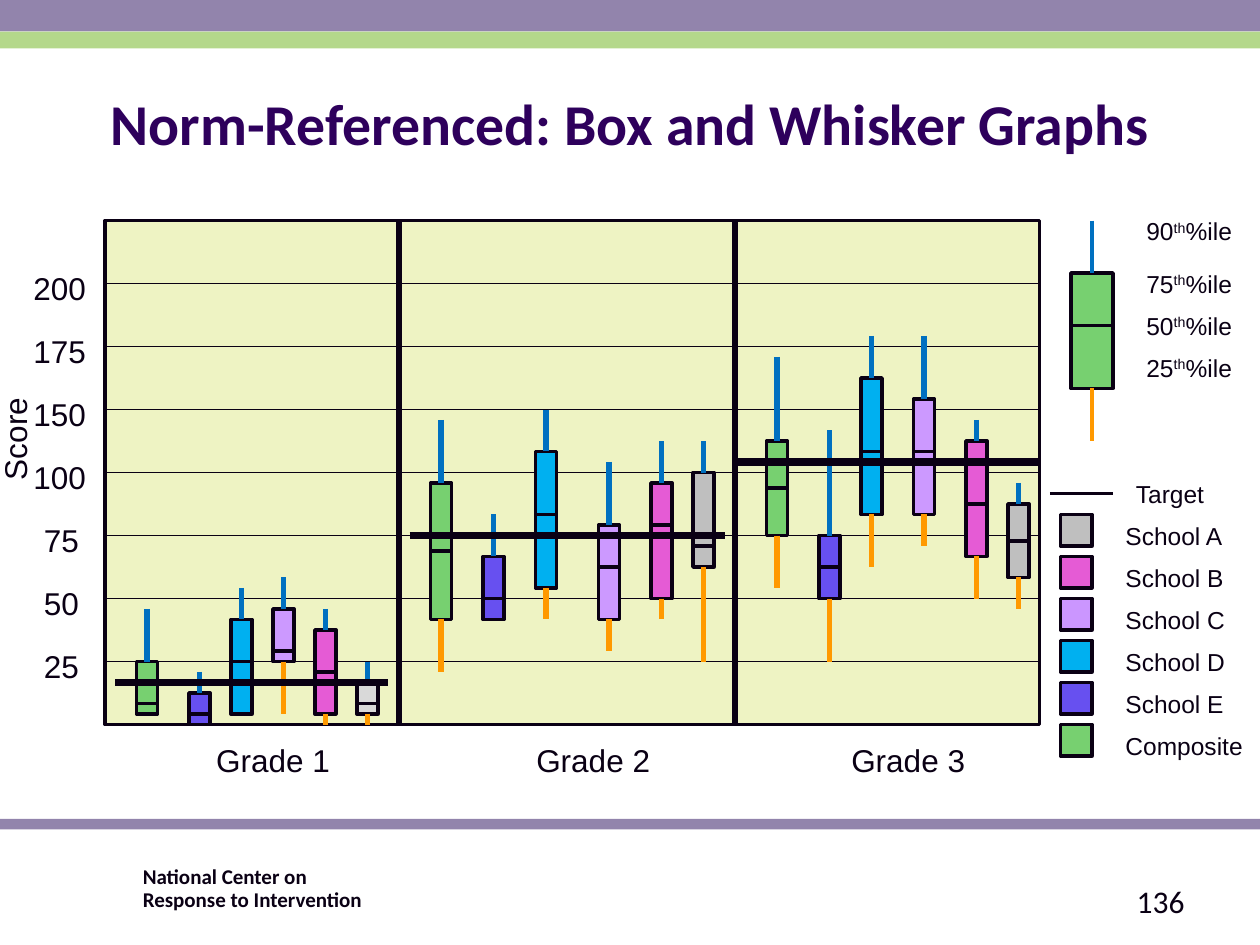
import pptx
import pptx.util
import pptx.dml.color
import pptx.enum.shapes
import pptx.enum.text
import pptx.oxml.ns
from lxml import etree

PX = pptx.util.Inches(1) // 120
ALIGN = pptx.enum.text.PP_ALIGN
ANCHOR = pptx.enum.text.MSO_ANCHOR
TOP, LEFT, BOTTOM, RIGHT = range(4)

INK, PURPLE, LIME = "0A0014", "9284AC", "B4D88B"
UPPER_WHISKER, LOWER_WHISKER = "0070C0", "FF9900"
GREEN, INDIGO, BLUE, LILAC, PINK, GRAY = (
    "77D070", "6750F0", "00B0F0", "CC99FF", "E55BD5", "BFBFBF")

BANDS = [(0, 0, 1200, 30, PURPLE), (0, 30, 1200, 16, LIME), (0, 780, 1200, 10, PURPLE)]
PLOT = (100, 210, 890, 480)
SCORES = ["200", "175", "150", "100", "75", "50", "25"]
GRID_TOP, GRID_STEP = 270, 60
DIVIDERS = [380, 700]
BOX_WIDTH = 20

# Boxes: fill, left, then heights on the slide of the 90th, 75th, 50th, 25th and 10th percentile
GRADES = [
    {"label": ("Grade 1", 180, 160), "target": (110, 370, 650), "boxes": [
        (GREEN, 130, 580, 630, 670, 680, None),
        (INDIGO, 180, 640, 660, 680, 690, None),
        (BLUE, 220, 560, 590, 630, 680, None),
        (LILAC, 260, 550, 580, 620, 630, 680),
        (PINK, 300, 580, 600, 640, 680, 690),
        ("D9D9D9", 340, 630, 650, 670, 680, 690)]},
    {"label": ("Grade 2", 480, 170), "target": (390, 690, 510), "boxes": [
        (GREEN, 410, 400, 460, 525, 590, 640),
        (INDIGO, 460, 490, 530, 570, 590, None),
        (BLUE, 510, 390, 430, 490, 560, 590),
        (LILAC, 570, 440, 500, 540, 590, 620),
        (PINK, 620, 420, 460, 500, 570, 590),
        (GRAY, 660, 420, 450, 520, 540, 630)]},
    {"label": ("Grade 3", 780, 170), "target": (700, 990, 440), "boxes": [
        (GREEN, 730, 340, 420, 465, 510, 560),
        (INDIGO, 780, 410, 510, 540, 570, 630),
        (BLUE, 820, 320, 360, 430, 490, 540),
        (LILAC, 870, 320, 380, 430, 490, 520),
        (PINK, 920, 400, 420, 480, 530, 570),
        (GRAY, 960, 460, 480, 515, 550, 580)]},
]
KEY_BOX = (GREEN, 1020, 210, 260, 310, 370, 420)
KEY_LABELS = [("90", 200), ("75", 250), ("50", 290), ("25", 330)]
LEGEND = [("School A", GRAY), ("School B", PINK), ("School C", "CB96FF"),
          ("School D", BLUE), ("School E", INDIGO), ("Composite", GREEN)]
LEGEND_TOP, LEGEND_STEP = 490, 40

presentation = pptx.Presentation()
presentation.slide_width, presentation.slide_height = 1200 * PX, 900 * PX
slide = presentation.slides.add_slide(presentation.slide_layouts[5])


def color(value):
    return pptx.dml.color.RGBColor.from_string(value)


def add_rectangle(left, top, width, height, fill, line_width=None):
    shape = slide.shapes.add_shape(
        pptx.enum.shapes.MSO_SHAPE.RECTANGLE, left * PX, top * PX, width * PX, height * PX)
    shape.shadow.inherit = False
    shape.fill.solid()
    shape.fill.fore_color.rgb = color(fill)
    if line_width:
        shape.line.color.rgb = color(INK)
        shape.line.width = pptx.util.Pt(line_width)
    else:
        shape.line.fill.background()
    return shape


def add_line(x1, y1, x2, y2, width, line_color=INK):
    line = slide.shapes.add_connector(
        pptx.enum.shapes.MSO_CONNECTOR.STRAIGHT, x1 * PX, y1 * PX, x2 * PX, y2 * PX)
    line.line.color.rgb = color(line_color)
    line.line.width = pptx.util.Pt(width)
    etree.SubElement(line._element.spPr, pptx.oxml.ns.qn("a:effectLst"))
    return line


def add_cross_line(rectangle, left, top, width, height, y, line_width):
    """Line across a rectangle, joined to its sides when at mid-height."""
    line = add_line(left, y, left + width, y, line_width)
    if 2 * y == 2 * top + height:
        line.begin_connect(rectangle, LEFT)
        line.end_connect(rectangle, RIGHT)


def add_run(paragraph, text, size, font="Arial", bold=False, font_color=INK):
    run = paragraph.add_run()
    run.text = text
    run.font.size = pptx.util.Pt(size)
    run.font.name = font
    run.font.bold = bold
    run.font.color.rgb = color(font_color)
    return run


def add_text_box(left, top, width, height, align=ALIGN.LEFT):
    box = slide.shapes.add_textbox(left * PX, top * PX, width * PX, height * PX)
    box.text_frame.word_wrap = True
    paragraph = box.text_frame.paragraphs[0]
    paragraph.alignment = align
    return box, paragraph


def add_label(text, left, top, width, height, size, align=ALIGN.LEFT):
    box, paragraph = add_text_box(left, top, width, height, align)
    add_run(paragraph, text, size)
    return box


def add_box_plot(fill, left, p90, p75, p50, p25, p10, width=BOX_WIDTH, whisker_width=3):
    bounds = (left, p75, width, p25 - p75)
    middle = left + width // 2
    box = add_rectangle(*bounds, fill, 2)
    add_cross_line(box, *bounds, p50, 2.25)
    upper = add_line(middle, p90, middle, p75, whisker_width, UPPER_WHISKER)
    upper.end_connect(box, TOP)
    if p10 is not None:
        lower = add_line(middle, p25, middle, p10, whisker_width, LOWER_WHISKER)
        lower.begin_connect(box, BOTTOM)


for band in BANDS:
    add_rectangle(*band)

title = slide.shapes.title
title.left, title.top, title.width, title.height = 60 * PX, 60 * PX, 1080 * PX, 126 * PX
title.text_frame.vertical_anchor = ANCHOR.MIDDLE
title_paragraph = title.text_frame.paragraphs[0]
title_paragraph.alignment = ALIGN.CENTER
title_paragraph.line_spacing = 0.8
add_run(title_paragraph, "Norm-Referenced: Box and Whisker Graphs", 33, "Calibri", True, "2E005C")

plot = add_rectangle(*PLOT, "EEF3C3", 2)
for index, score in enumerate(SCORES):
    y = GRID_TOP + index * GRID_STEP
    add_cross_line(plot, *PLOT, y, 0.75)
    left, width = (20, 80) if len(score) == 3 else (30, 60)
    add_label(score, left, y - 20, width, 48, 18)
for x in DIVIDERS:
    add_line(x, PLOT[1], x, PLOT[1] + PLOT[3], 3)
add_label("Score", -71, 360, 170, 48, 18).rotation = 270

for grade in GRADES:
    for box_plot in grade["boxes"]:
        add_box_plot(*box_plot)
    start, end, y = grade["target"]
    add_line(start, y, end, y, 4.5)
    name, left, width = grade["label"]
    add_label(name, left, 700, width, 48, 18, ALIGN.CENTER)

add_box_plot(*KEY_BOX, width=40, whisker_width=2.25)
for number, top in KEY_LABELS:
    box, paragraph = add_text_box(1080, top, 120, 41)
    add_run(paragraph, number, 14)
    ordinal = add_run(paragraph, "th", 14)
    ordinal.font._element.set("baseline", "30000")
    add_run(paragraph, "%ile", 14)

add_line(1000, 470, 1060, 470, 2.25)
add_label("Target", 1070, 450, 130, 41, 14)
for index, (name, fill) in enumerate(LEGEND):
    top = LEGEND_TOP + index * LEGEND_STEP
    add_rectangle(1010, top, 30, 30, fill, 2)
    add_label(name, 1060, top, 140, 41, 14)

footer, paragraph = add_text_box(131, 820, 389, 36)
frame = footer.text_frame
frame.margin_left = frame.margin_right = frame.margin_top = frame.margin_bottom = 5 * PX
paragraph.line_spacing = 0.9
add_run(paragraph, "National Center on", 12, "Calibri", True)
paragraph.add_line_break()
add_run(paragraph, "Response to Intervention", 12, "Calibri", True)

page_number, paragraph = add_text_box(860, 834, 280, 48, ALIGN.RIGHT)
page_number.text_frame.vertical_anchor = ANCHOR.MIDDLE
add_run(paragraph, "136", 18, "Calibri")

presentation.save("out.pptx")
